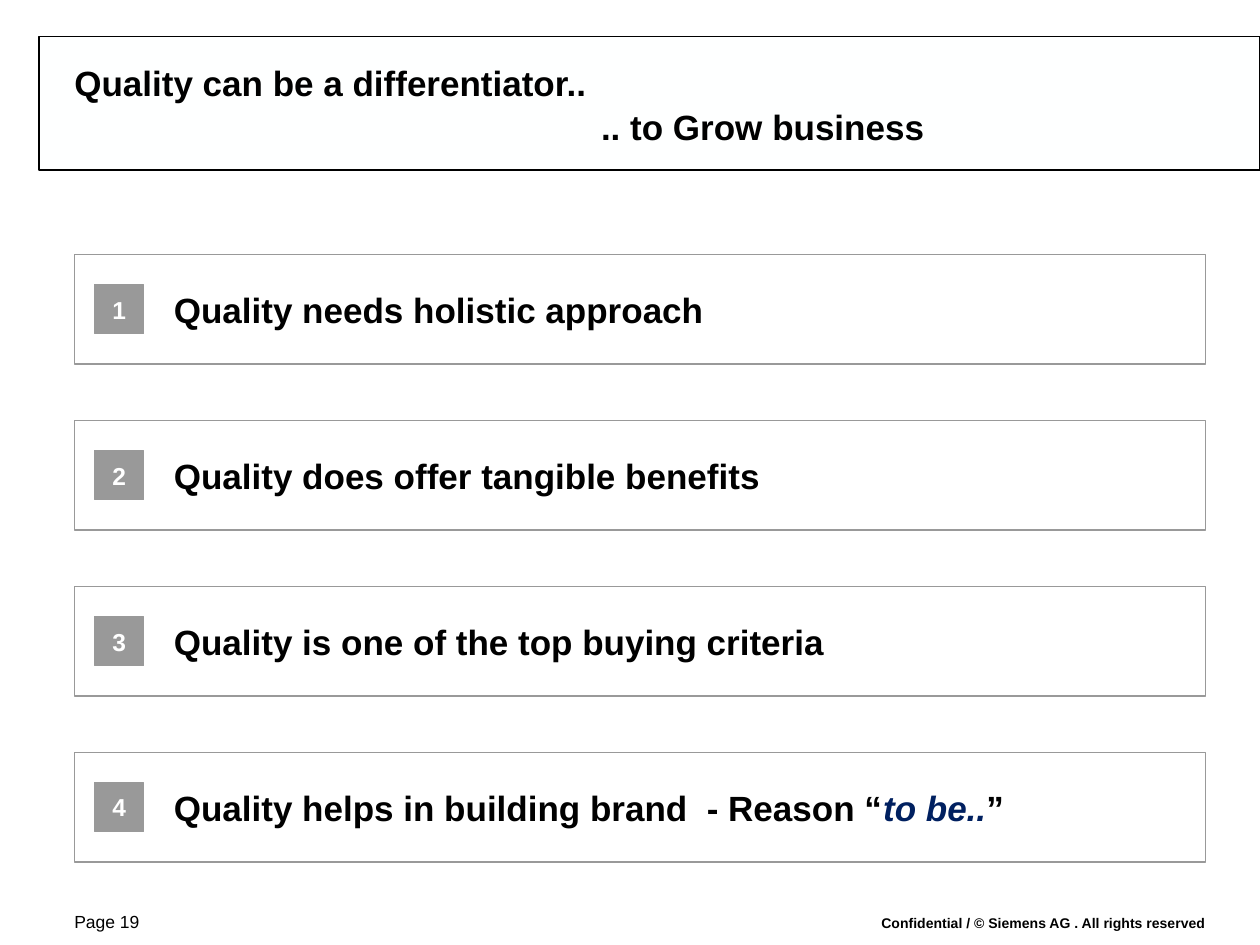
from dataclasses import dataclass

from pptx import Presentation
from pptx.dml.color import RGBColor
from pptx.enum.shapes import MSO_SHAPE
from pptx.enum.text import MSO_ANCHOR, MSO_AUTO_SIZE, PP_ALIGN
from pptx.util import Inches, Pt


@dataclass(frozen=True)
class Theme:
    font: str = "Arial"
    ink: str = "000000"
    paper: str = "FFFFFF"
    band: str = "FEFFFF"
    grey: str = "999999"
    navy: str = "002060"
    head: int = 20
    badge: int = 14
    page: int = 10
    legal: int = 8


THEME = Theme()
LEFT, WIDTH = 0.59, 8.98
TOP, STEP, HIGH = 2.02, 1.317, 0.87

# Each point is a list of runs: text and whether it is stressed
POINTS = [
    [("Quality needs holistic approach", False)],
    [("Quality does offer tangible benefits", False)],
    [("Quality is one of the top buying criteria", False)],
    [("Quality helps in building brand  - Reason “", False),
     ("to be..", True), ("”", False)],
]


def write(shape, lines, size, color=THEME.ink, bold=True, wrap=True,
          align=PP_ALIGN.LEFT, anchor=MSO_ANCHOR.MIDDLE):
    """Fill a shape with lines, each a list of (text, stressed) runs."""
    frame = shape.text_frame
    frame.word_wrap = wrap
    frame.auto_size = MSO_AUTO_SIZE.NONE
    frame.vertical_anchor = anchor
    frame.margin_left = frame.margin_right = 0
    frame.margin_top = frame.margin_bottom = 0
    for i, line in enumerate(lines):
        para = frame.add_paragraph() if i else frame.paragraphs[0]
        para.alignment = align
        for text, stress in line:
            run = para.add_run()
            run.text = text
            font = run.font
            font.name, font.size = THEME.font, Pt(size)
            font.bold, font.italic = bold, stress
            font.color.rgb = RGBColor.from_string(THEME.navy if stress else color)
    return frame


def add_box(shapes, x, y, w, h, fill, line):
    box = shapes.add_shape(MSO_SHAPE.RECTANGLE, Inches(x), Inches(y),
                           Inches(w), Inches(h))
    box.shadow.inherit = False
    box.fill.solid()
    box.fill.fore_color.rgb = RGBColor.from_string(fill)
    box.line.color.rgb = RGBColor.from_string(line)
    box.line.width = Pt(0.75)
    return box


def add_text(shapes, x, y, w, h, line, size, **style):
    box = shapes.add_textbox(Inches(x), Inches(y), Inches(w), Inches(h))
    write(box, [line], size, **style)


def add_title(slide):
    # The band goes behind the title placeholder
    band = add_box(slide.shapes, 0.31, 0.29, 9.69, 1.06, THEME.band, THEME.ink)
    slide.shapes[0].element.addprevious(band.element)
    title = slide.shapes.title
    title.left, title.top = Inches(LEFT), Inches(0.36)
    title.width, title.height = Inches(6.99), Inches(0.81)
    frame = write(title, [[("Quality can be a differentiator..", False)],
                          [(".. to Grow business", False)]],
                  THEME.head, anchor=MSO_ANCHOR.BOTTOM)
    for para in frame.paragraphs:
        para.line_spacing = 1.05
    # Second line starts where the first one ends
    props = frame.paragraphs[1].element.get_or_add_pPr() if hasattr(
        frame.paragraphs[1], "element") else frame.paragraphs[1]._p.get_or_add_pPr()
    props.set("marL", str(Inches(4.18)))
    props.set("indent", "0")


def add_point(slide, rank, runs):
    y = TOP + (rank - 1) * STEP
    shapes = slide.shapes.add_group_shape().shapes
    add_box(shapes, LEFT, y, WIDTH, HIGH, THEME.paper, THEME.grey)
    add_text(shapes, 1.38, y + 0.27, 8.19, 0.34, runs, THEME.head)
    badge = add_box(shapes, 0.75, y + 0.24, 0.39, 0.39, THEME.grey, THEME.grey)
    write(badge, [[(str(rank), False)]], THEME.badge, color=THEME.paper,
          align=PP_ALIGN.CENTER)


def add_footer(slide):
    add_text(slide.shapes, LEFT, 7.23, 0.53, 0.17, [("Page 19", False)],
             THEME.page, bold=False, wrap=False, anchor=MSO_ANCHOR.BOTTOM)
    add_text(slide.shapes, 6.96, 7.26, 2.61, 0.13,
             [("Confidential / © Siemens AG . All rights reserved", False)],
             THEME.legal, wrap=False, align=PP_ALIGN.RIGHT,
             anchor=MSO_ANCHOR.BOTTOM)


def main():
    deck = Presentation()
    deck.slide_width, deck.slide_height = Inches(10), Inches(7.5)
    slide = deck.slides.add_slide(deck.slide_layouts[5])
    add_title(slide)
    for rank, runs in enumerate(POINTS, 1):
        add_point(slide, rank, runs)
    add_footer(slide)
    deck.save("out.pptx")


if __name__ == "__main__":
    main()
